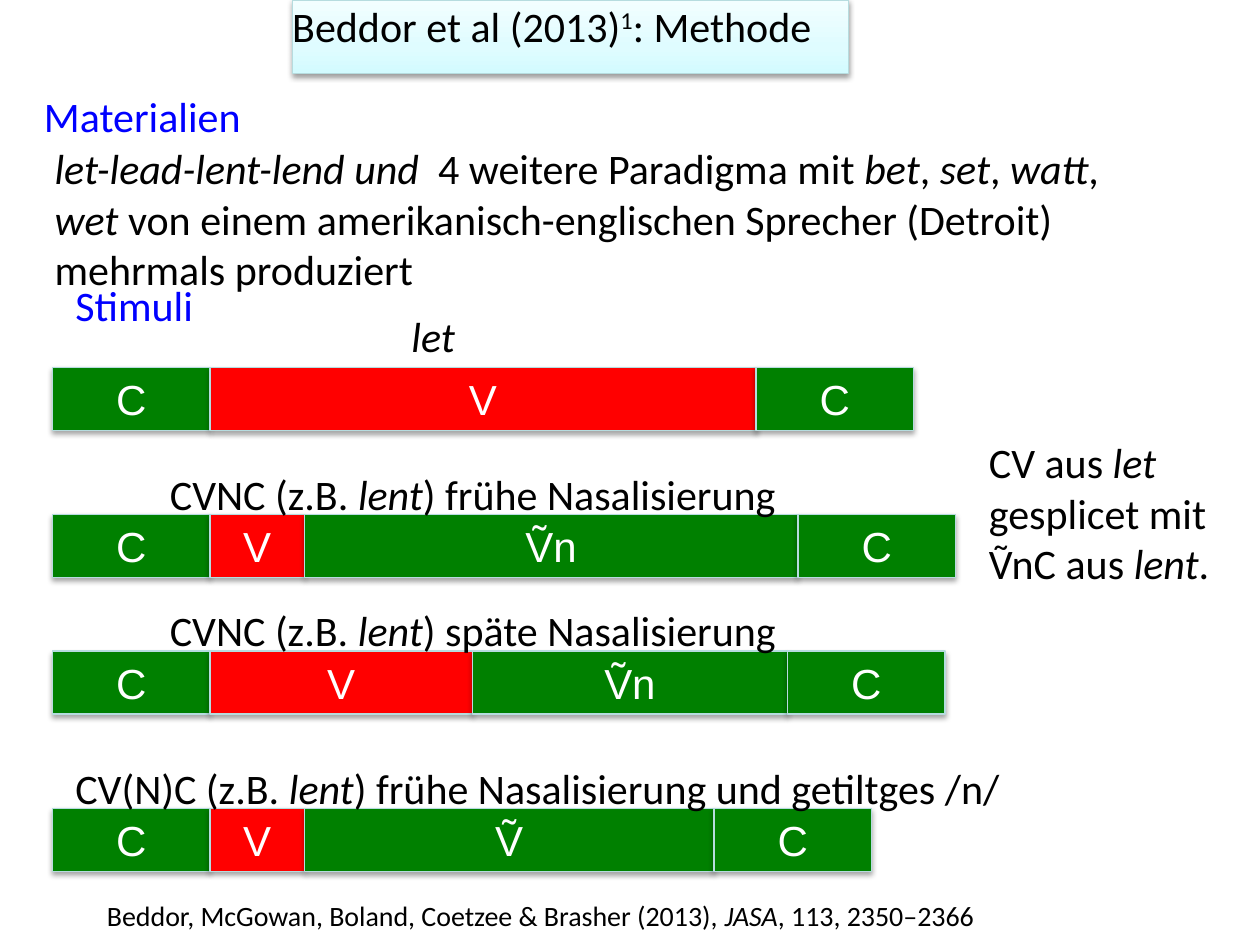
import copy

import pptx
import pptx.dml.color
import pptx.enum.shapes
import pptx.enum.text
import pptx.oxml
import pptx.oxml.ns
import pptx.util

Pt = pptx.util.Pt
Anchor = pptx.enum.text.MSO_ANCHOR
Align = pptx.enum.text.PP_ALIGN
AutoSize = pptx.enum.text.MSO_AUTO_SIZE
qn = pptx.oxml.ns.qn

BLACK, WHITE, BLUE = "000000", "FFFFFF", "0000FF"
GREEN, RED, EDGE = "008000", "FF0000", "B6DCDF"


def rgb(value):
    return pptx.dml.color.RGBColor.from_string(value)


class MethodSlide:
    text_font = "Calibri"
    segment_font = "Arial"
    size = 24
    segment_left = 30
    segment_height = 36

    def __init__(self, presentation):
        self.slide = presentation.slides.add_slide(presentation.slide_layouts[1])

    def place(self, shape, left, top, width, height):
        shape.left, shape.top = Pt(left), Pt(top)
        shape.width, shape.height = Pt(width), Pt(height)

    def add_runs(self, paragraph, pieces, color=BLACK, font=text_font, size=size):
        for text, style in pieces:
            run = paragraph.add_run()
            run.text = text
            run.font.name = font
            run.font.size = Pt(size)
            run.font.color.rgb = rgb(color)
            run.font.italic = style == "italic"
            if style == "super":
                run.font._element.set("baseline", "30000")

    def edge_and_shadow(self, shape, distance, opacity):
        shape.line.color.rgb = rgb(EDGE)
        shape.line.width = Pt(0.75)
        shape.shadow.inherit = False
        effects = shape._element.spPr.find(qn("a:effectLst"))
        effects.append(pptx.oxml.parse_xml(
            f'<a:outerShdw {pptx.oxml.ns.nsdecls("a")} blurRad="{Pt(3.1)}" '
            f'dist="{Pt(distance)}" dir="5400000" rotWithShape="0">'
            f'<a:srgbClr val="{BLACK}"><a:alpha val="{opacity * 1000}"/></a:srgbClr>'
            '</a:outerShdw>'))

    def title(self, box, pieces):
        shape = self.slide.shapes.title
        self.place(shape, *box)
        shape.fill.gradient()
        shape.fill.gradient_angle = 90
        stops = shape._element.spPr.find(".//" + qn("a:gsLst"))
        stops.insert(1, copy.deepcopy(stops[0]))
        shades = [(0, "D3FBFF"), (0.35, "DFFCFF"), (1, "F2FEFF")]
        for stop, (position, color) in zip(shape.fill.gradient_stops, shades):
            stop.position = position
            stop.color.rgb = rgb(color)
        self.edge_and_shadow(shape, 1.6, 38)
        frame = shape.text_frame
        frame.auto_size = AutoSize.NONE
        frame.vertical_anchor = Anchor.TOP
        frame.margin_left = frame.margin_top = frame.margin_bottom = 0
        frame.margin_right = Pt(2.88)
        frame.paragraphs[0].alignment = Align.LEFT
        self.add_runs(frame.paragraphs[0], pieces)

    def body(self, box, pieces):
        shape = self.slide.placeholders[1]
        self.place(shape, *box)
        shape.text_frame.auto_size = AutoSize.NONE
        paragraph = shape.text_frame.paragraphs[0]
        paragraph.space_before = Pt(0)
        properties = paragraph._p.get_or_add_pPr()
        properties.set("marL", "0")
        properties.set("indent", "0")
        properties.append(properties.makeelement(qn("a:buNone"), {}))
        self.add_runs(paragraph, pieces)

    def text(self, box, pieces, color=BLACK, size=size, wrap=True):
        frame = self.slide.shapes.add_textbox(*map(Pt, box)).text_frame
        frame.word_wrap = wrap
        frame.auto_size = AutoSize.SHAPE_TO_FIT_TEXT
        self.add_runs(frame.paragraphs[0], pieces, color, size=size)

    def segments(self, top, parts):
        group = self.slide.shapes.add_group_shape()
        left = self.segment_left
        for label, width in parts:
            shape = group.shapes.add_shape(
                pptx.enum.shapes.MSO_SHAPE.RECTANGLE,
                Pt(left), Pt(top), Pt(width), Pt(self.segment_height))
            shape.fill.solid()
            shape.fill.fore_color.rgb = rgb(RED if label == "V" else GREEN)
            self.edge_and_shadow(shape, 1.8, 35)
            shape.text_frame.vertical_anchor = Anchor.MIDDLE
            paragraph = shape.text_frame.paragraphs[0]
            paragraph.alignment = Align.CENTER
            self.add_runs(paragraph, [(label, "")], WHITE, self.segment_font)
            left += width


def main():
    presentation = pptx.Presentation()
    presentation.slide_width, presentation.slide_height = Pt(720), Pt(540)
    method = MethodSlide(presentation)

    method.title((167, 0, 318, 42), [
        ("Beddor et al (2013)", ""), ("1", "super"), (": Methode", "")])
    method.text((18, 48, 129, 36), [("Materialien", "")], BLUE, wrap=False)
    method.body((24, 78, 636, 94), [
        ("let-lead-lent-lend und ", "italic"), (" 4 weitere Paradigma mit ", ""),
        ("bet", "italic"), (", ", ""), ("set", "italic"), (", ", ""),
        ("watt", "italic"), (", ", ""), ("wet ", "italic"),
        ("von einem amerikanisch-englischen Sprecher (Detroit) "
         "mehrmals produziert", "")])

    stimuli = [
        (210, [("C", 90), ("V", 312), ("C", 90)]),
        (294, [("C", 90), ("V", 54), ("Ṽn", 282), ("C", 90)]),
        (372, [("C", 90), ("V", 150), ("Ṽn", 180), ("C", 90)]),
        (462, [("C", 90), ("V", 54), ("Ṽ", 234), ("C", 90)]),
    ]
    for top, parts in stimuli:
        method.segments(top, parts)

    method.text((36, 156, 82, 36), [("Stimuli", "")], BLUE, wrap=False)
    method.text((228, 174, 192, 36), [("let", "italic")])
    captions = [
        ((90, 264, 406, 36), "CVNC (z.B. ", ") frühe Nasalisierung"),
        ((90, 342, 451, 36), "CVNC (z.B. ", ") späte Nasalisierung"),
        ((36, 432, 596, 36), "CV(N)C (z.B. ",
         ") frühe Nasalisierung und getiltges /n/"),
    ]
    for box, start, end in captions:
        method.text(box, [(start, ""), ("lent", "italic"), (end, "")])
    method.text((558, 246, 162, 94), [
        ("CV aus ", ""), ("let ", "italic"), ("gesplicet mit ṼnC aus ", ""),
        ("lent", "italic"), (".", "")])
    method.text((54, 510, 528, 27), [
        ("Beddor, McGowan, Boland, Coetzee & Brasher (2013), ", ""),
        ("JASA", "italic"), (", 113, 2350–2366", "")], size=16)

    presentation.save("out.pptx")


if __name__ == "__main__":
    main()
